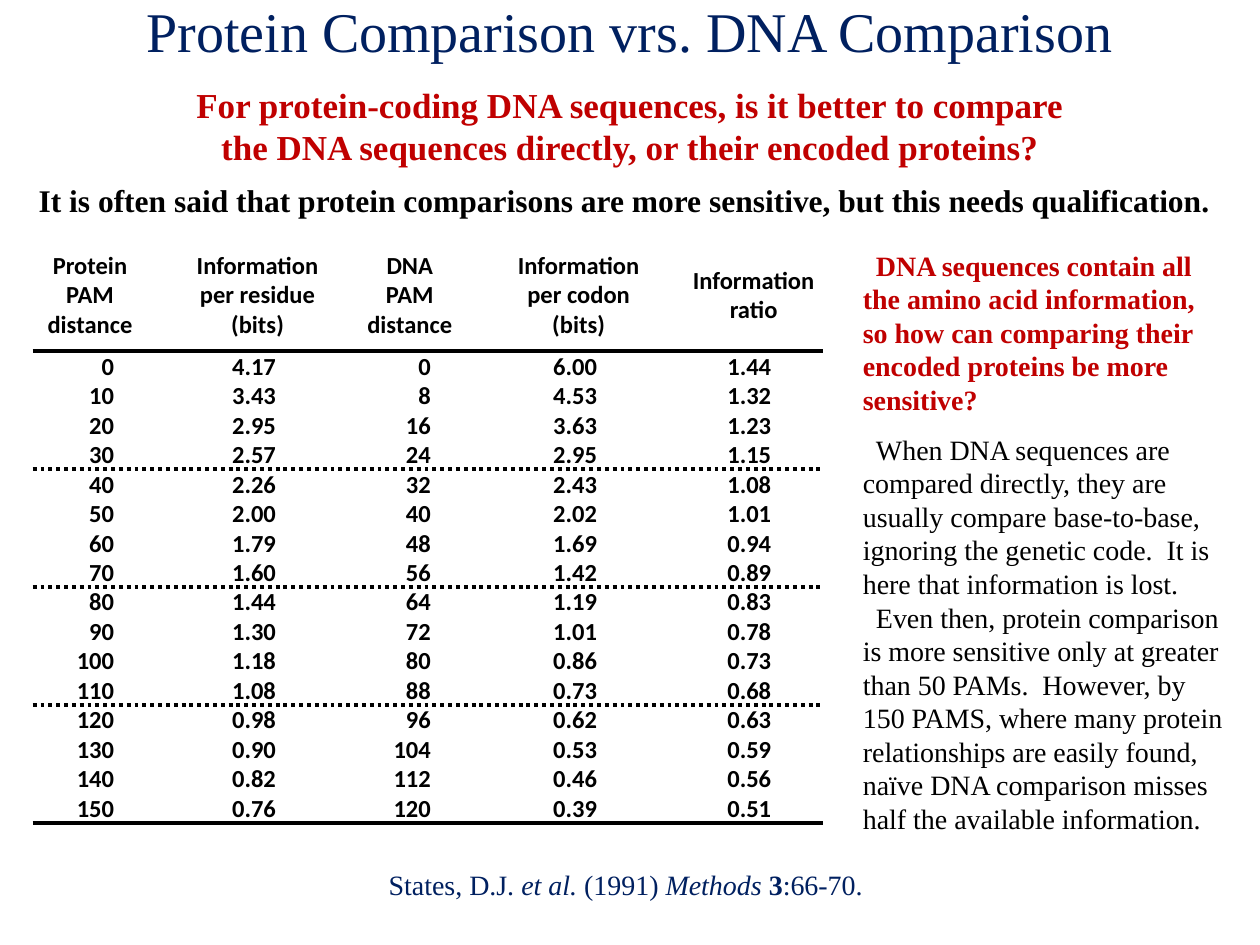
from lxml import etree
from pptx import Presentation
from pptx import util as u
from pptx.dml import color
from pptx.enum import dml, shapes, text
from pptx.oxml import ns

COLORS = {"navy": "002060", "red": "C00000", "black": "000000"}
SERIF, SANS = "Times New Roman", "Calibri"
LEFT, CENTER, RIGHT = text.PP_ALIGN.LEFT, text.PP_ALIGN.CENTER, text.PP_ALIGN.RIGHT
LINE_RATIO = 1.2
NO_STYLE = "{2D5ABB26-0587-4C30-8999-92F81FD0307C}"

TITLE = "Protein Comparison vrs. DNA Comparison"
QUESTION = ("For protein-coding DNA sequences, is it better to compare "
            "the DNA sequences directly, or their encoded proteins?")
CLAIM = ("It is often said that protein comparisons are more sensitive, "
         "but this needs qualification.")
PUZZLE = ("DNA sequences contain all the amino acid information, so how can "
          "comparing their encoded proteins be more sensitive?")
ANSWERS = [
    "When DNA sequences are compared directly, they are usually compare "
    "base-to-base, ignoring the genetic code.  It is here that information is lost.",
    "Even then, protein comparison is more sensitive only at greater than 50 PAMs.  "
    "However, by 150 PAMS, where many protein relationships are easily found, "
    "naïve DNA comparison misses half the available information.",
]
CITATION = [("States, D.J. ", {}), ("et al. ", {"italic": True}), ("(1991) ", {}),
            ("Methods ", {"italic": True}), ("3", {"bold": True}), (":66-70.", {})]

COLUMNS = [
    {"head": "Protein\vPAM\vdistance", "width": 65.5, "align": RIGHT, "right": 19,
     "values": [str(pam) for pam in range(0, 160, 10)]},
    {"head": "Information\vper residue\v(bits)", "width": 124, "left": 2, "align": CENTER, "right": 4,
     "values": "4.17 3.43 2.95 2.57 2.26 2.00 1.79 1.60 "
               "1.44 1.30 1.18 1.08 0.98 0.90 0.82 0.76".split()},
    {"head": "DNA\vPAM\vdistance", "width": 52, "align": RIGHT, "right": 14,
     "values": [str(pam) for pam in range(0, 128, 8)]},
    {"head": "Information\vper codon\v(bits)", "width": 131, "left": 10, "align": CENTER, "right": 4,
     "values": "6.00 4.53 3.63 2.95 2.43 2.02 1.69 1.42 "
               "1.19 1.01 0.86 0.73 0.62 0.53 0.46 0.39".split()},
    {"head": "Information\vratio", "width": 79, "align": CENTER, "right": 5,
     "values": "1.44 1.32 1.23 1.15 1.08 1.01 0.94 0.89 "
               "0.83 0.78 0.73 0.68 0.63 0.59 0.56 0.51".split()},
]
TABLE_LEFT, TABLE_TOP, HEAD_HEIGHT, ROW_HEIGHT = 18.7, 136.6, 64.7, 16.8
RULE_TOP, RULE_STEP, RULE_COUNT = 200.4, 67.5, 5


def write(paragraph, runs, size, font, shade, align=LEFT, **style):
    paragraph.alignment = align
    paragraph.line_spacing = u.Pt(round(size * LINE_RATIO, 2))
    for words, extra in runs:
        run = paragraph.add_run()
        run.text = words
        values = {"size": u.Pt(size), "name": font, "bold": False, **style, **extra}
        for name, value in values.items():
            setattr(run.font, name, value)
        run.font.color.rgb = color.RGBColor.from_string(COLORS[shade])


def add_text(slide, box, paragraphs, size, shade, align=LEFT, indent=0, **style):
    shape = slide.shapes.add_textbox(*map(u.Pt, box))
    frame = shape.text_frame
    frame.word_wrap = True
    for index, runs in enumerate(paragraphs):
        paragraph = frame.add_paragraph() if index else frame.paragraphs[0]
        write(paragraph, runs, size, SERIF, shade, align, **style)
        if indent:
            paragraph._p.get_or_add_pPr().set("indent", str(u.Pt(indent)))


def add_rules(slide):
    right = TABLE_LEFT + sum(column["width"] for column in COLUMNS)
    for index in range(RULE_COUNT):
        y = RULE_TOP + index * RULE_STEP
        rule = slide.shapes.add_connector(shapes.MSO_CONNECTOR.STRAIGHT,
                                          *map(u.Pt, (TABLE_LEFT, y, right, y)))
        rule.line.width = u.Pt(2.25)
        rule.line.color.rgb = color.RGBColor.from_string(COLORS["black"])
        if 0 < index < RULE_COUNT - 1:
            rule.line.dash_style = dml.MSO_LINE.ROUND_DOT
        etree.SubElement(rule._element.spPr, ns.qn("a:effectLst"))


def add_comparison_table(slide):
    last = len(COLUMNS[0]["values"])
    width = sum(column["width"] for column in COLUMNS)
    height = HEAD_HEIGHT + last * ROW_HEIGHT
    table = slide.shapes.add_table(last + 1, len(COLUMNS),
                                   *map(u.Pt, (TABLE_LEFT, TABLE_TOP, width, height))).table
    table.horz_banding = False
    table._tbl.tblPr.find(ns.qn("a:tableStyleId")).text = NO_STYLE
    for row in range(last + 1):
        table.rows[row].height = u.Pt(ROW_HEIGHT if row else HEAD_HEIGHT)
    for index, column in enumerate(COLUMNS):
        table.columns[index].width = u.Pt(column["width"])
        for row, words in enumerate([column["head"], *column["values"]]):
            cell = table.cell(row, index)
            layout = {"margin_left": u.Pt(column.get("left", 0)),
                      "margin_right": u.Pt(column["right"] if row else 0),
                      "margin_top": 0, "margin_bottom": 0,
                      "vertical_anchor": text.MSO_ANCHOR.MIDDLE}
            for name, value in layout.items():
                setattr(cell, name, value)
            cell.fill.background()
            paragraph = cell.text_frame.paragraphs[0]
            for part, line in enumerate(words.split("\v")):
                if part:
                    paragraph.add_line_break()
                write(paragraph, [(line, {})], 14, SANS, "black",
                      column["align"] if row else CENTER, bold=True)


def main():
    presentation = Presentation()
    presentation.slide_width, presentation.slide_height = u.Pt(720), u.Pt(540)
    slide = presentation.slides.add_slide(presentation.slide_layouts[5])

    title = slide.shapes.title
    place = {"left": 36, "top": 0, "width": 648, "height": 34.5}
    for name, value in place.items():
        setattr(title, name, u.Pt(value))
    title.text_frame.vertical_anchor = text.MSO_ANCHOR.MIDDLE
    write(title.text_frame.paragraphs[0], [(TITLE, {})], 32, SERIF, "navy", CENTER)

    add_text(slide, (105, 44, 510, 55.4), [[(QUESTION, {})]], 20, "red", CENTER, bold=True)
    add_comparison_table(slide)
    add_rules(slide)
    add_text(slide, (15, 100, 690, 29), [[(CLAIM, {})]], 18, "black", bold=True)
    add_text(slide, (486, 138.2, 216, 104.4), [[(PUZZLE, {})]], 16, "red", indent=7.5, bold=True)
    add_text(slide, (486, 243.4, 222, 240), [[(words, {})] for words in ANSWERS],
             16, "black", indent=7.5)
    add_text(slide, (215, 492.3, 290, 26.6), [CITATION], 16, "navy")
    presentation.save("out.pptx")


if __name__ == "__main__":
    main()
